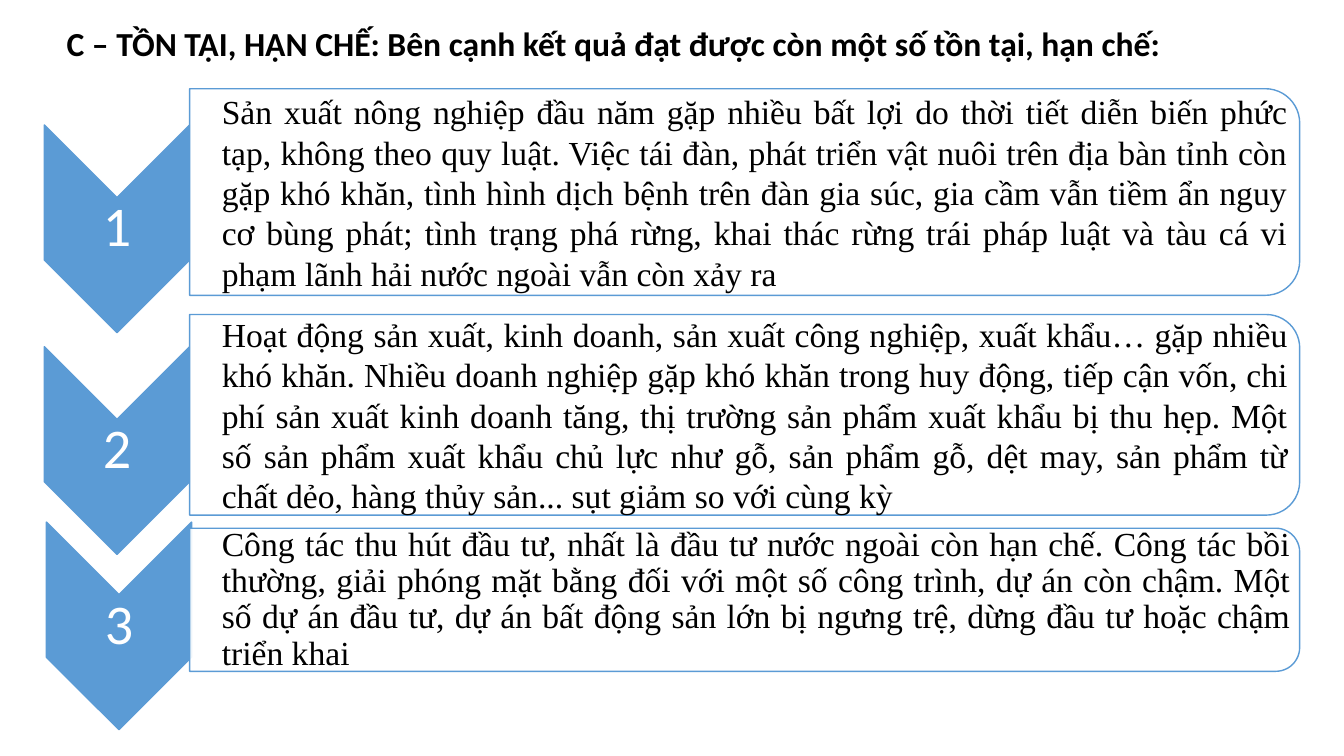
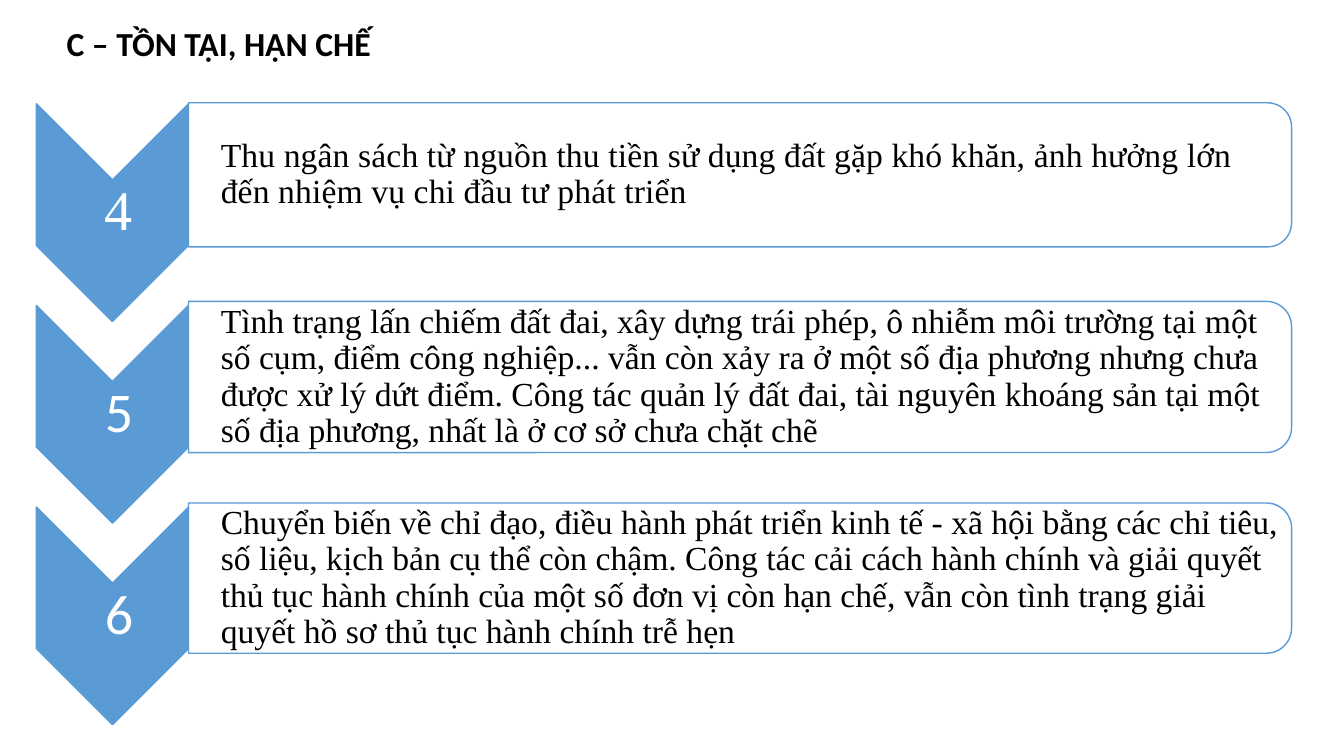
import lxml.etree
import pptx
import pptx.dml.color
import pptx.enum.shapes
import pptx.enum.text
import pptx.oxml.ns
import pptx.util

Inches = pptx.util.Inches
ALIGN = pptx.enum.text.PP_ALIGN
ANCHOR = pptx.enum.text.MSO_ANCHOR
SHAPE = pptx.enum.shapes.MSO_SHAPE

COLORS = {
    name: pptx.dml.color.RGBColor.from_string(value)
    for name, value in {"blue": "5B9BD5", "white": "FFFFFF", "black": "000000"}.items()
}
HEADING_FONT = "Calibri"
BODY_FONT = "Times New Roman"
TEXT_INDENT = 0.13
CORNER_INSET = 0.0488

SLIDES = [
    {
        "title": "C – TỒN TẠI, HẠN CHẾ: Bên cạnh kết quả đạt được còn một số tồn tại, hạn chế:",
        "chevron_size": (1.44, 2.06),
        "panel_left": 1.88,
        "panel_width": 11.01,
        "align": ALIGN.JUSTIFY,
        "number_indent": 0,
        "items": [
            {
                "number": "1", "chevron": (0.44, 1.24), "panel": (0.88, 2.05), "line_spacing": 1.0,
                "text": "Sản xuất nông nghiệp đầu năm gặp nhiều bất lợi do thời tiết diễn biến phức tạp, không theo quy luật. Việc tái đàn, phát triển vật nuôi trên địa bàn tỉnh còn gặp khó khăn, tình hình dịch bệnh trên đàn gia súc, gia cầm vẫn tiềm ẩn nguy cơ bùng phát; tình trạng phá rừng, khai thác rừng trái pháp luật và tàu cá vi phạm lãnh hải nước ngoài vẫn còn xảy ra",
            },
            {
                "number": "2", "chevron": (0.44, 3.44), "panel": (3.12, 1.99), "line_spacing": 1.0,
                "text": "Hoạt động sản xuất, kinh doanh, sản xuất công nghiệp, xuất khẩu… gặp nhiều khó khăn. Nhiều doanh nghiệp gặp khó khăn trong huy động, tiếp cận vốn, chi phí sản xuất kinh doanh tăng, thị trường sản phẩm xuất khẩu bị thu hẹp. Một số sản phẩm xuất khẩu chủ lực như gỗ, sản phẩm gỗ, dệt may, sản phẩm từ chất dẻo, hàng thủy sản... sụt giảm so với cùng kỳ",
            },
            {
                "number": "3", "chevron": (0.46, 5.18), "panel": (5.24, 1.42),
                "text": "Công tác thu hút đầu tư, nhất là đầu tư nước ngoài còn hạn chế. Công tác bồi thường, giải phóng mặt bằng đối với một số công trình, dự án còn chậm. Một số dự án đầu tư, dự án bất động sản lớn bị ngưng trệ, dừng đầu tư hoặc chậm triển khai",
            },
        ],
    },
    {
        "title": "C – TỒN TẠI, HẠN CHẾ",
        "chevron_size": (1.51, 2.16),
        "panel_left": 1.87,
        "panel_width": 10.94,
        "align": ALIGN.LEFT,
        "number_indent": TEXT_INDENT,
        "items": [
            {
                "number": "4", "chevron": (0.36, 1.03), "panel": (1.02, 1.43),
                "number_font": BODY_FONT, "character_spacing": 10,
                "text": "Thu ngân sách từ nguồn thu tiền sử dụng đất gặp khó khăn, ảnh hưởng lớn đến nhiệm vụ chi đầu tư phát triển",
            },
            {
                "number": "5", "chevron": (0.36, 3.03), "panel": (2.99, 1.5),
                "text": "Tình trạng lấn chiếm đất đai, xây dựng trái phép, ô nhiễm môi trường tại một số cụm, điểm công nghiệp... vẫn còn xảy ra ở một số địa phương nhưng chưa được xử lý dứt điểm. Công tác quản lý đất đai, tài nguyên khoáng sản tại một số địa phương, nhất là ở cơ sở chưa chặt chẽ",
            },
            {
                "number": "6", "chevron": (0.36, 5.03), "panel": (4.99, 1.49),
                "text": "Chuyển biến về chỉ đạo, điều hành phát triển kinh tế - xã hội bằng các chỉ tiêu, số liệu, kịch bản cụ thể còn chậm. Công tác cải cách hành chính và giải quyết thủ tục hành chính của một số đơn vị còn hạn chế, vẫn còn tình trạng giải quyết hồ sơ thủ tục hành chính trễ hẹn",
            },
        ],
    },
]


def add_turned_shape(slide, kind, left, top, width, height, fill):
    shape = slide.shapes.add_shape(
        kind,
        Inches(left + (width - height) / 2),
        Inches(top + (height - width) / 2),
        Inches(height),
        Inches(width),
    )
    shape.rotation = 90
    shape.shadow.inherit = False
    shape.fill.solid()
    shape.fill.fore_color.rgb = COLORS[fill]
    shape.line.color.rgb = COLORS["blue"]
    shape.line.width = pptx.util.Pt(1)
    return shape


def add_label(slide, box, text, font, size, color, align, indent, line_spacing, insets):
    frame = slide.shapes.add_textbox(*[Inches(length) for length in box]).text_frame
    frame.word_wrap = True
    frame.vertical_anchor = ANCHOR.MIDDLE
    frame.margin_left = Inches(insets[0])
    frame.margin_top = frame.margin_right = frame.margin_bottom = Inches(insets[1])
    paragraph = frame.paragraphs[0]
    paragraph.text = text
    paragraph.alignment = align
    paragraph.line_spacing = line_spacing
    paragraph._p.get_or_add_pPr().set("marL", str(Inches(indent)))
    paragraph.font.name = font
    paragraph.font.size = pptx.util.Pt(size)
    paragraph.font.color.rgb = COLORS[color]
    return paragraph


presentation = pptx.Presentation()
presentation.slide_width = Inches(13.33)
presentation.slide_height = Inches(7.5)

for content in SLIDES:
    slide = presentation.slides.add_slide(presentation.slide_layouts[5])
    title = slide.shapes.title
    title.left, title.top = Inches(0.56), Inches(0.18)
    title.width, title.height = Inches(12.59), Inches(0.5)
    title.text_frame.text = content["title"]
    title.text_frame.vertical_anchor = ANCHOR.TOP
    title.text_frame.auto_size = pptx.enum.text.MSO_AUTO_SIZE.NONE
    paragraph = title.text_frame.paragraphs[0]
    paragraph.alignment = ALIGN.LEFT
    paragraph.font.name = HEADING_FONT
    paragraph.font.size = pptx.util.Pt(24)
    paragraph.font.bold = True
    paragraph.font.color.rgb = COLORS["black"]

    chevron_width, chevron_height = content["chevron_size"]
    panel_left, panel_width = content["panel_left"], content["panel_width"]
    for item in content["items"]:
        left, top = item["chevron"]
        add_turned_shape(slide, SHAPE.CHEVRON, left, top, chevron_width, chevron_height, "blue")
        number_box = (left, top + chevron_width / 2, chevron_width, chevron_height - chevron_width)
        add_label(
            slide, number_box, item["number"], item.get("number_font", HEADING_FONT), 40, "white",
            ALIGN.CENTER, content["number_indent"], 0.9, (0.03, 0.03),
        )

        panel_top, panel_height = item["panel"]
        panel = add_turned_shape(
            slide, SHAPE.ROUND_2_SAME_RECTANGLE, panel_left, panel_top, panel_width, panel_height, "white"
        )
        fill_color = panel._element.spPr.find(pptx.oxml.ns.qn("a:solidFill"))[0]
        lxml.etree.SubElement(fill_color, pptx.oxml.ns.qn("a:alpha")).set("val", "90000")

        inset = panel_height * CORNER_INSET
        text_box = (panel_left, panel_top + inset, panel_width - inset, panel_height - 2 * inset)
        paragraph = add_label(
            slide, text_box, item["text"], BODY_FONT, 24, "black",
            content["align"], TEXT_INDENT, item.get("line_spacing", 0.9), (0.19, 0.02),
        )
        if "character_spacing" in item:
            paragraph.runs[0]._r.get_or_add_rPr().set("spc", str(item["character_spacing"]))

presentation.save("out.pptx")
